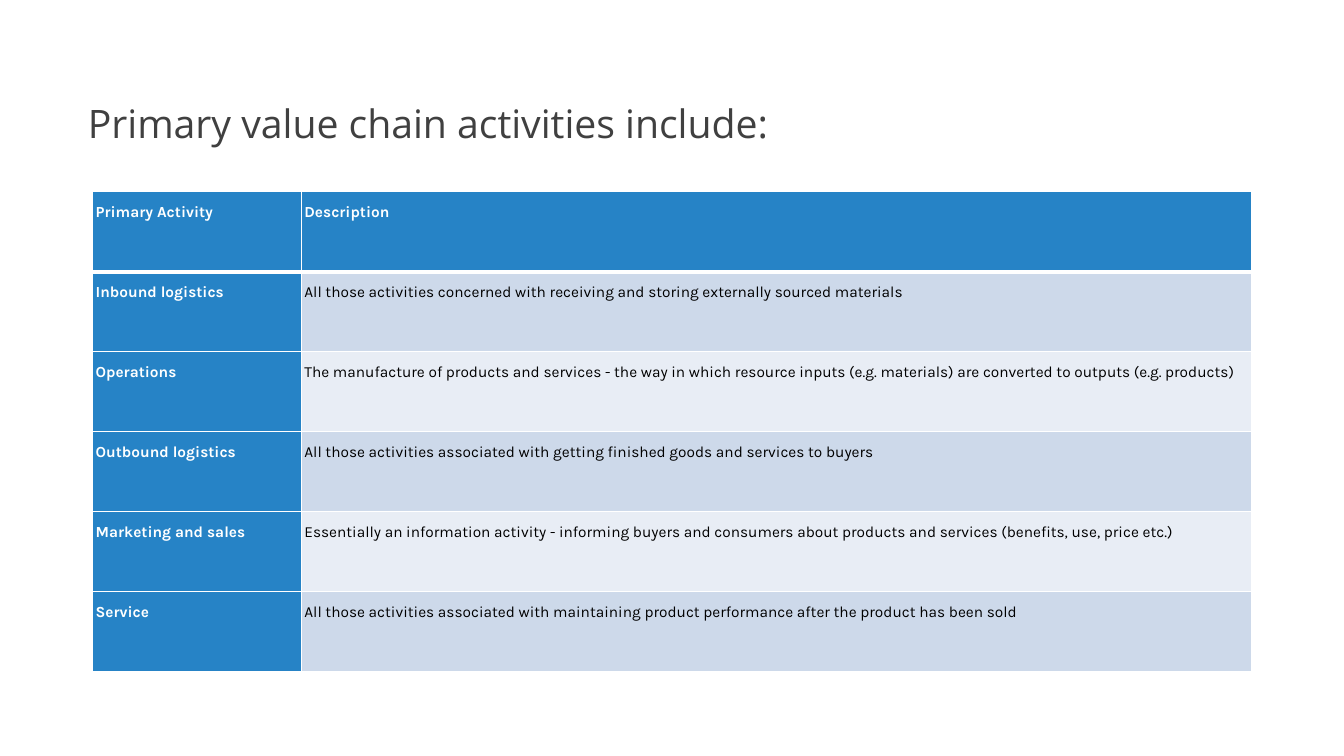
from lxml import etree
from pptx import Presentation
from pptx.dml.color import RGBColor
from pptx.enum import text
from pptx.oxml import ns
from pptx.util import Cm, Pt

COLORS = {
    "title": "404040",
    "blue": "2683C6",
    "dark_band": "CDD9EA",
    "light_band": "E8EDF5",
    "white": "FFFFFF",
    "black": "000000",
}
ACTIVITIES = [
    ("Primary Activity", "Description"),
    ("Inbound logistics",
     "All those activities concerned with receiving and storing externally sourced materials"),
    ("Operations",
     "The manufacture of products and services - the way in which resource inputs "
     "(e.g. materials) are converted to outputs (e.g. products)"),
    ("Outbound logistics",
     "All those activities associated with getting finished goods and services to buyers"),
    ("Marketing and sales",
     "Essentially an information activity - informing buyers and consumers about "
     "products and services (benefits, use, price etc.)"),
    ("Service",
     "All those activities associated with maintaining product performance after "
     "the product has been sold"),
]


def color(name):
    """Return the named colour."""
    return RGBColor.from_string(COLORS[name])


def add_span(para, words, font, size, ink, bold=False):
    """Append one formatted run to a paragraph."""
    span = para.add_run()
    span.text = words
    span.font.name = font
    span.font.size = Pt(size)
    span.font.bold = bold
    span.font.color.rgb = color(ink)


def set_borders(cell, widths):
    """Draw white cell borders from a dict of side to points."""
    properties = cell._tc.get_or_add_tcPr()
    for side, width in widths.items():
        line = etree.SubElement(properties, ns.qn(f"a:ln{side}"), w=str(Pt(width)))
        fill = etree.SubElement(line, ns.qn("a:solidFill"))
        etree.SubElement(fill, ns.qn("a:srgbClr"), val=COLORS["white"])


def place_title(page, left, top, width, height):
    """Place the slide title above the table."""
    title = page.shapes.title
    title.left, title.top, title.width, title.height = left, top, width, height
    frame = title.text_frame
    frame.word_wrap = True
    frame.auto_size = text.MSO_AUTO_SIZE.NONE
    frame.vertical_anchor = text.MSO_ANCHOR.BOTTOM
    frame.margin_bottom = Cm(1.35)
    para = frame.paragraphs[0]
    para.alignment = text.PP_ALIGN.LEFT
    para.line_spacing = 0.9
    add_span(para, "Primary value chain activities include:", "Open Sans", 28, "title")


def fill_cell(cell, words, row, column):
    """Format and fill one cell according to its place in the table."""
    heading = row == 0 or column == 0
    set_borders(cell, {"L": 1, "R": 1, "T": 3 if row == 1 else 1, "B": 3 if row == 0 else 1})
    band = "dark_band" if row % 2 else "light_band"
    cell.fill.solid()
    cell.fill.fore_color.rgb = color("blue" if heading else band)
    cell.margin_left = cell.margin_right = cell.margin_top = cell.margin_bottom = Cm(0.07)
    para = cell.text_frame.paragraphs[0]
    para.line_spacing = 1.5
    para.space_after = Pt(10)
    add_span(para, words, "Karla", 11, "white" if heading else "black", heading)


def place_activities(page, left, top, width, height):
    """Place the table of primary activities."""
    table = page.shapes.add_table(len(ACTIVITIES), 2, left, top, width, height).table
    table.columns[0].width = Cm(5.26)
    table.columns[1].width = width - Cm(5.26)
    for row, entry in enumerate(ACTIVITIES):
        for column, words in enumerate(entry):
            fill_cell(table.cell(row, column), words, row, column)


def main():
    """Build and save the slide."""
    deck = Presentation()
    deck.slide_width, deck.slide_height = Cm(33.87), Cm(19.05)
    page = deck.slides.add_slide(deck.slide_layouts[5])
    place_title(page, Cm(1.96), Cm(1.52), Cm(29.95), Cm(3.53))
    place_activities(page, Cm(2.34), Cm(4.83), Cm(29.21), Cm(12.1))
    deck.save("out.pptx")


if __name__ == "__main__":
    main()
